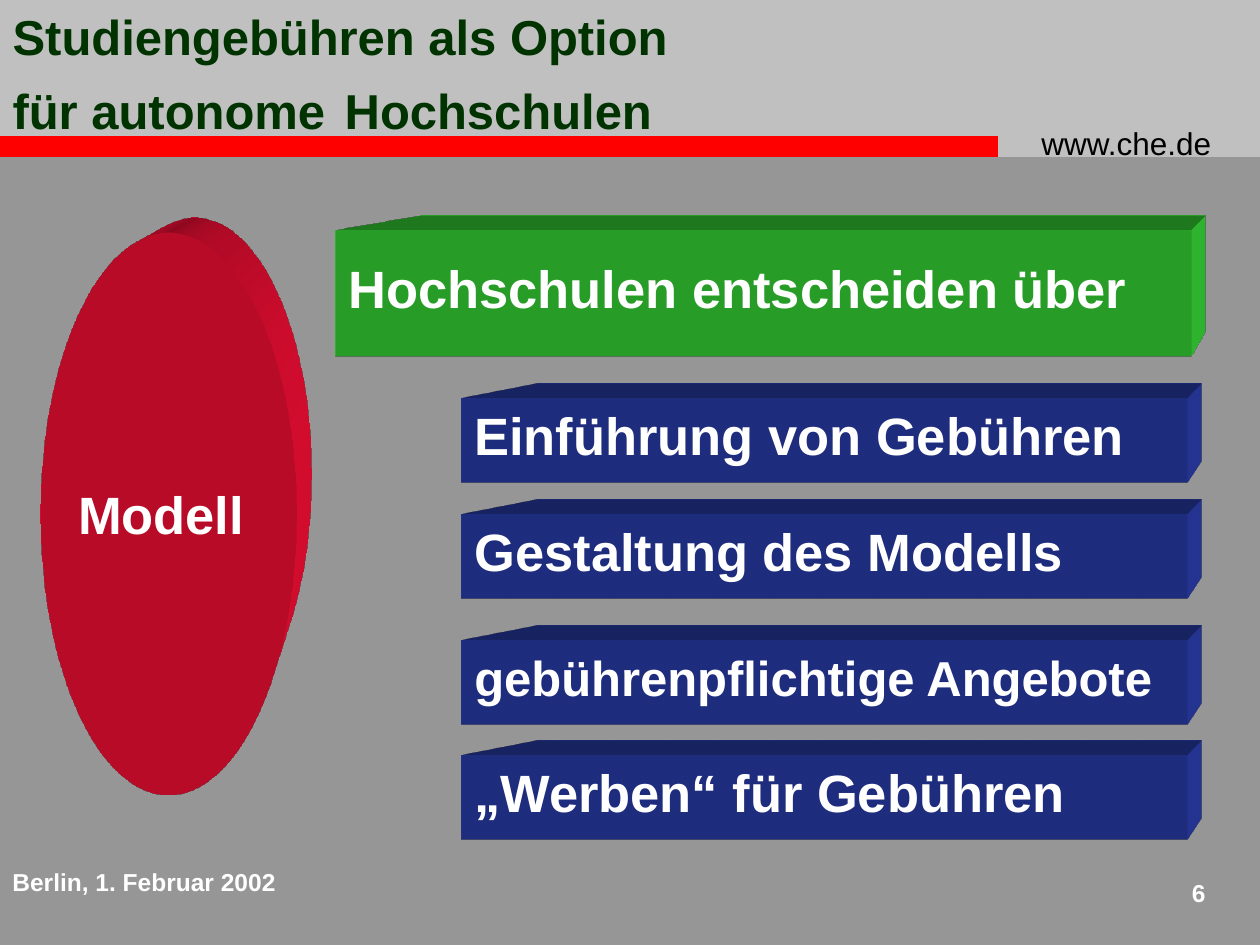
import pptx
import pptx.util
import pptx.oxml
import pptx.oxml.ns
import pptx.dml.color
import pptx.enum.shapes
import pptx.enum.text

SCALE = 914400 / 126  # EMU in one px
FONT = "Arial"
COLOURS = {
    "background": "969696", "header": "C0C0C0", "rule": "FF0000",
    "title": "003300", "black": "000000", "white": "FFFFFF",
    "model": "F00E34", "decision": "33CC33", "option": "293BA5",
}
ALIGN = pptx.enum.text.PP_ALIGN
ANCHOR = pptx.enum.text.MSO_ANCHOR
SHAPES = pptx.enum.shapes.MSO_SHAPE


def colour(name):
    return pptx.dml.color.RGBColor.from_string(COLOURS[name])


def px(*lengths):
    return [pptx.util.Emu(round(length * SCALE)) for length in lengths]


def add_run(paragraph, text, size=14, color="white", bold=True):
    run = paragraph.add_run()
    run.text = text
    run.font.name = FONT
    run.font.size = pptx.util.Pt(size)
    run.font.bold = bold
    run.font.color.rgb = colour(color)


def set_text(shape, text, align=ALIGN.LEFT, anchor=ANCHOR.TOP, wrap=True,
             line_spacing=None, **run_format):
    frame = shape.text_frame
    frame.word_wrap = wrap
    frame.vertical_anchor = anchor
    paragraph = frame.paragraphs[0]
    paragraph.alignment = align
    paragraph.line_spacing = line_spacing
    add_run(paragraph, text, **run_format)


def add_label(slide, box, text, **text_format):
    set_text(slide.shapes.add_textbox(*px(*box)), text, **text_format)


def add_block(slide, kind, box, fill):
    shape = slide.shapes.add_shape(kind, *px(*box))
    shape.shadow.inherit = False
    shape.fill.solid()
    shape.fill.fore_color.rgb = colour(fill)
    shape.line.fill.background()
    return shape


def extrude(shape, fill):
    """Give a shape depth, seen in perspective from the top right."""
    namespace = pptx.oxml.ns.nsdecls("a")
    properties = shape.element.spPr
    properties.append(pptx.oxml.parse_xml(
        f'<a:scene3d {namespace}><a:camera prst="legacyPerspectiveTopRight"/>'
        '<a:lightRig rig="legacyFlat3" dir="b"/></a:scene3d>'))
    properties.append(pptx.oxml.parse_xml(
        f'<a:sp3d {namespace} extrusionH="887400" prstMaterial="legacyMatte">'
        '<a:bevelT w="13500" h="13500" prst="angle"/>'
        '<a:bevelB w="13500" h="13500" prst="angle"/>'
        f'<a:extrusionClr><a:srgbClr val="{COLOURS[fill]}"/></a:extrusionClr>'
        '</a:sp3d>'))


def add_solid(slide, kind, box, fill, text, size=30, **text_format):
    shape = add_block(slide, kind, box, fill)
    extrude(shape, fill)
    set_text(shape, text, size=size, anchor=ANCHOR.MIDDLE, wrap=False, **text_format)


def add_header(slide, left, top, width, height):
    add_block(slide, SHAPES.RECTANGLE, (left, top, width, height), "header")
    add_block(slide, SHAPES.RECTANGLE, (left, top + height - 21, 998, 21), "rule")
    add_label(slide, (left + 1029, top + 118, 221, 50), "www.che.de",
              size=18, color="black", bold=False)
    # Title in two lines, brought in front of the header band
    title = slide.shapes.title
    title.element.getparent().append(title.element)
    title.left, title.top, title.width, title.height = px(left, top, 998, 135)
    set_text(title, "Studiengebühren als Option", size=28, color="title")
    title.text_frame.auto_size = pptx.enum.text.MSO_AUTO_SIZE.NONE
    second = title.text_frame.add_paragraph()
    second.alignment = ALIGN.LEFT
    second.line_spacing = 0.25
    second.space_before = pptx.util.Pt(27)
    for text, size in (("für autonome", 28), (" ", 40), ("Hochschulen", 28)):
        add_run(second, text, size=size, color="title")


def add_model(slide, left, top, width, height):
    add_solid(slide, SHAPES.OVAL, (left + 1, top + 2, 255, height), "model",
              "Modell ", align=ALIGN.CENTER)
    # Decision bar, with its options indented below
    add_solid(slide, SHAPES.RECTANGLE, (left + 296, top, width - 296, 126), "decision",
              "Hochschulen entscheiden über", line_spacing=0.75)
    options = (
        (168, "Einführung von Gebühren", 30),
        (284, "Gestaltung des Modells", 30),
        (410, "gebührenpflichtige Angebote", 28),
        (525, "„Werben“ für Gebühren", 30),
    )
    for offset, text, size in options:
        add_solid(slide, SHAPES.RECTANGLE, (left + 422, top + offset, width - 426, 84),
                  "option", text, size=size, line_spacing=0.75)


def add_footer(slide, left, top, width):
    add_label(slide, (left, top, 305, 63), "Berlin, 1. Februar 2002")
    add_label(slide, (left + width - 73, top + 11, 73, 53), "6", align=ALIGN.RIGHT)


def main():
    presentation = pptx.Presentation()
    presentation.slide_width, presentation.slide_height = px(1260, 945)
    slide = presentation.slides.add_slide(presentation.slide_layouts[5])
    slide.background.fill.solid()
    slide.background.fill.fore_color.rgb = colour("background")
    add_header(slide, 0, 0, 1260, 157)
    add_model(slide, 40, 231, 1150, 562)
    add_footer(slide, 0, 861, 1218)
    presentation.save("out.pptx")


if __name__ == "__main__":
    main()
